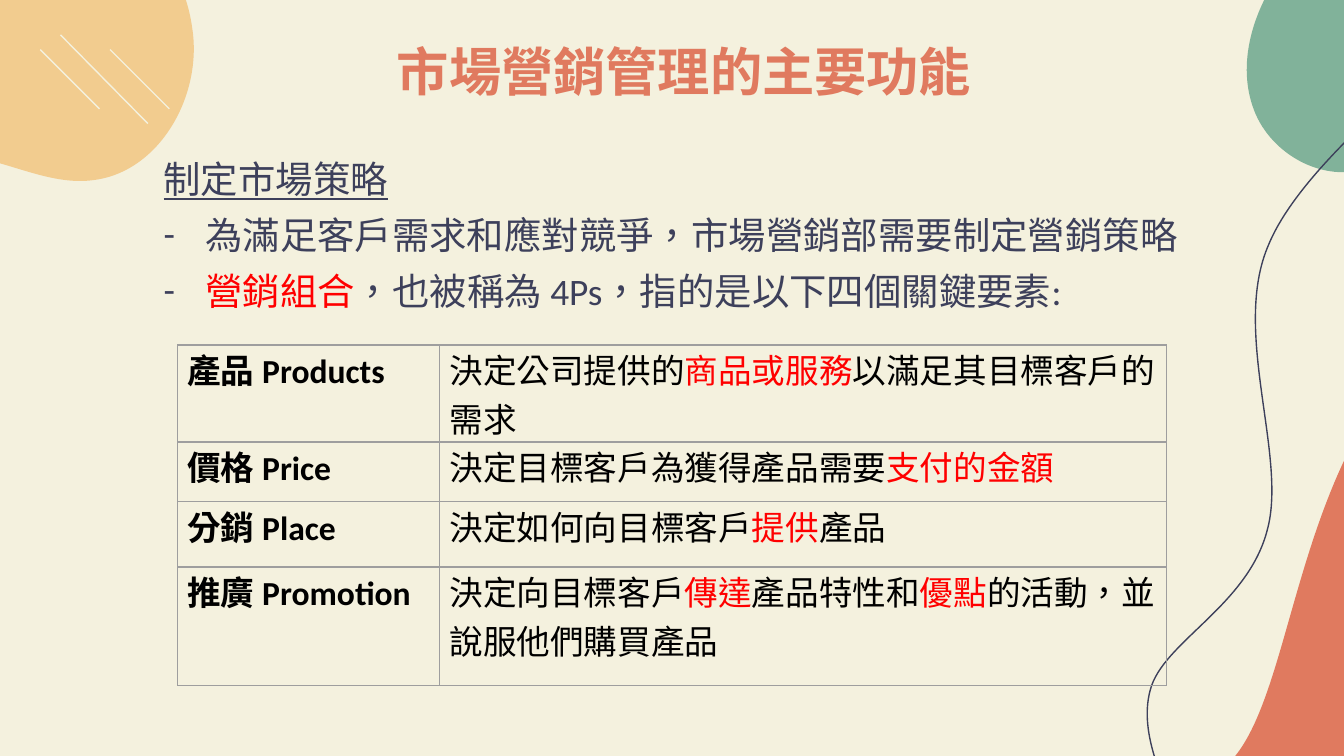
from lxml import etree
from pptx import Presentation
from pptx.dml.color import RGBColor
from pptx.enum.shapes import MSO_CONNECTOR
from pptx.enum.text import MSO_ANCHOR, PP_ALIGN
from pptx.oxml.ns import qn
from pptx.util import Pt

STRAIGHT = MSO_CONNECTOR.STRAIGHT
CENTER = PP_ALIGN.CENTER
TOP, MIDDLE = MSO_ANCHOR.TOP, MSO_ANCHOR.MIDDLE

COLORS = {
    "cream": "F4F1DE", "yellow": "F2CC8F", "green": "81B29A",
    "coral": "E07A5F", "navy": "3D405B", "red": "FF0000",
    "black": "000000", "border": "9E9E9E",
}
TITLE_FORMAT = {"size": Pt(28), "name": "Arial", "bold": True}
BODY_FORMAT = {"size": Pt(20), "name": "Calibri"}
CELL_FORMAT = {"size": Pt(18), "name": "Calibri"}

# Outlines in points: one point is a straight step, three are a Bezier curve
YELLOW_BLOB = [(103, 15), [
    [(108.7, 51), (85.7, 92), (50.4, 96.5)], [(30, 99.4), (10, 89.3), (-10, 85)],
    [(-10, -83.5)],
    [(6.5, -80), (23, -74), (39, -67)], [(70.6, -50.4), (98, -21.6), (103, 15)]]]
GREEN_BLOB = [(671.8, 59), [
    [(681, 83.5), (711.4, 100), (736.6, 88.6)], [(751, 82), (761.8, 68.4), (774, 57.6)],
    [(714.2, -45.4)],
    [(703.4, -37), (694.8, -26.6), (686.9, -15.8)], [(671, 5.8), (662.4, 34.6), (671.8, 59)]]]
WAVE = [(627, 431.3), [
    [(625.7, 420.5), (608.4, 392.4), (617, 367.2)], [(625.7, 342.7), (669, 323.3), (679, 283.7)],
    [(689.8, 244), (659.5, 177), (679.7, 131)], [(699, 84.2), (778.3, 26.6), (797.8, 5.8)]]]
CORAL_BLOB = [(778.3, 471.6), [
    [(778.3, 172)],
    [(669.6, 252.7), (704.2, 442), (620, 416.9)], [(536.4, 391), (473.8, 412.6), (453.6, 471.6)]]]
STROKES = [(32.4, 18.7, 79.2, 66.2), (59, 26.6, 90.7, 58.3), (21.6, 26.6, 53.3, 58.3)]

# Text parts between asterisks are red
BODY_LINES = [
    "為滿足客戶需求和應對競爭，市場營銷部需要制定營銷策略",
    "*營銷組合*，也被稱為 4Ps，指的是以下四個關鍵要素:",
]
MIX_ROWS = [
    (52, "產品 Products", "決定公司提供的*商品或服務*以滿足其目標客戶的需求"),
    (32, "價格 Price", "決定目標客戶為獲得產品需要*支付的金額*"),
    (35, "分銷 Place", "決定如何向目標客戶*提供*產品"),
    (63.5, "推廣 Promotion", "決定向目標客戶*傳達*產品特性和*優點*的活動，並說服他們購買產品"),
]
COLUMN_WIDTHS = (140.4, 389.5)


def rgb(name):
    return RGBColor.from_string(COLORS[name])


def bend_curves(shape, segments):
    """Join the three steps of each curve segment into one Bezier curve."""
    steps = iter(list(shape._element.iter(qn("a:lnTo"))))
    for segment in segments:
        lines = [next(steps) for _ in segment]
        if len(lines) == 3:
            curve = etree.Element(qn("a:cubicBezTo"))
            lines[0].addprevious(curve)
            for line in lines:
                curve.append(line[0])
                line.getparent().remove(line)


def add_outline(slide, outline, fill=None, line=None):
    start, segments = outline
    builder = slide.shapes.build_freeform(Pt(start[0]), Pt(start[1]))
    builder.add_line_segments(
        [(Pt(x), Pt(y)) for segment in segments for x, y in segment],
        close=fill is not None)
    shape = builder.convert_to_shape()
    bend_curves(shape, segments)
    shape.shadow.inherit = False
    if fill:
        shape.fill.solid()
        shape.fill.fore_color.rgb = rgb(fill)
    else:
        shape.fill.background()
    if line:
        shape.line.color.rgb = rgb(line)
        shape.line.width = Pt(0.75)
    else:
        shape.line.fill.background()


def add_stroke(slide, ends):
    connector = slide.shapes.add_connector(STRAIGHT, *map(Pt, ends))
    connector.line.color.rgb = rgb("cream")
    connector.line.width = Pt(0.75)
    etree.SubElement(connector._element.spPr, qn("a:effectLst"))


def add_runs(paragraph, text, color, font_format):
    for index, part in enumerate(text.split("*")):
        if part:
            run = paragraph.add_run()
            run.text = part
            run._r.get_or_add_rPr().set("lang", "zh-TW")
            for key, value in font_format.items():
                setattr(run.font, key, value)
            run.font.color.rgb = rgb("red" if index % 2 else color)


def add_text_frame(slide, box, anchor):
    frame = slide.shapes.add_textbox(*map(Pt, box)).text_frame
    settings = {"word_wrap": True, "vertical_anchor": anchor}
    settings.update({f"margin_{side}": Pt(7.2)
                     for side in ("left", "top", "right", "bottom")})
    for key, value in settings.items():
        setattr(frame, key, value)
    return frame


def set_indent(paragraph, margin, indent, bullet=None):
    properties = paragraph._p.get_or_add_pPr()
    properties.set("marL", str(Pt(margin)))
    properties.set("indent", str(Pt(indent)))
    if bullet:
        color = etree.SubElement(properties, qn("a:buClr"))
        etree.SubElement(color, qn("a:srgbClr"), val=COLORS["navy"])
        etree.SubElement(properties, qn("a:buFont"), typeface="Calibri")
        etree.SubElement(properties, qn("a:buChar"), char=bullet)


def add_body(slide):
    frame = add_text_frame(slide, (62.6, 76.3, 607.7, 291.6), TOP)
    heading = frame.paragraphs[0]
    set_indent(heading, 36, -18)
    add_runs(heading, "制定市場策略", "navy", {**BODY_FORMAT, "underline": True})
    for text in BODY_LINES:
        paragraph = frame.add_paragraph()
        paragraph.space_before = Pt(6)
        set_indent(paragraph, 40.3, -22.3, "-")
        add_runs(paragraph, text, "navy", BODY_FORMAT)


def fill_cell(cell, text, bold):
    settings = {"margin_left": Pt(5.2), "margin_right": Pt(5.2),
                "margin_top": 0, "margin_bottom": 0, "vertical_anchor": TOP}
    for key, value in settings.items():
        setattr(cell, key, value)
    add_runs(cell.text_frame.paragraphs[0], text, "black",
             {**CELL_FORMAT, "bold": bold})
    properties = cell._tc.get_or_add_tcPr()
    for side in ("lnL", "lnR", "lnT", "lnB"):
        border = etree.SubElement(properties, qn(f"a:{side}"), w=str(Pt(0.75)))
        fill = etree.SubElement(border, qn("a:solidFill"))
        etree.SubElement(fill, qn("a:srgbClr"), val=COLORS["border"])
    cell.fill.background()


def add_mix_table(slide):
    height = sum(row[0] for row in MIX_ROWS)
    table = slide.shapes.add_table(
        len(MIX_ROWS), len(COLUMN_WIDTHS), Pt(95.2), Pt(184.8),
        Pt(sum(COLUMN_WIDTHS)), Pt(height)).table
    table.first_row = table.horz_banding = False
    for column, width in zip(table.columns, COLUMN_WIDTHS):
        column.width = Pt(width)
    for index, (row_height, name, meaning) in enumerate(MIX_ROWS):
        table.rows[index].height = Pt(row_height)
        fill_cell(table.cell(index, 0), name, True)
        fill_cell(table.cell(index, 1), meaning, False)


def main():
    presentation = Presentation()
    presentation.slide_width, presentation.slide_height = Pt(720), Pt(405)
    slide = presentation.slides.add_slide(presentation.slide_layouts[6])
    slide.background.fill.solid()
    slide.background.fill.fore_color.rgb = rgb("cream")

    # Decoration
    add_outline(slide, YELLOW_BLOB, fill="yellow")
    add_outline(slide, GREEN_BLOB, fill="green")
    add_outline(slide, WAVE, line="navy")
    add_outline(slide, CORAL_BLOB, fill="coral")
    for ends in STROKES:
        add_stroke(slide, ends)

    # Title
    title = add_text_frame(slide, (48.2, 14.7, 636.5, 46), MIDDLE).paragraphs[0]
    title.alignment = CENTER
    add_runs(title, "市場營銷管理的主要功能", "coral", TITLE_FORMAT)

    # Body text and the marketing mix
    add_body(slide)
    add_mix_table(slide)
    presentation.save("out.pptx")


if __name__ == "__main__":
    main()
